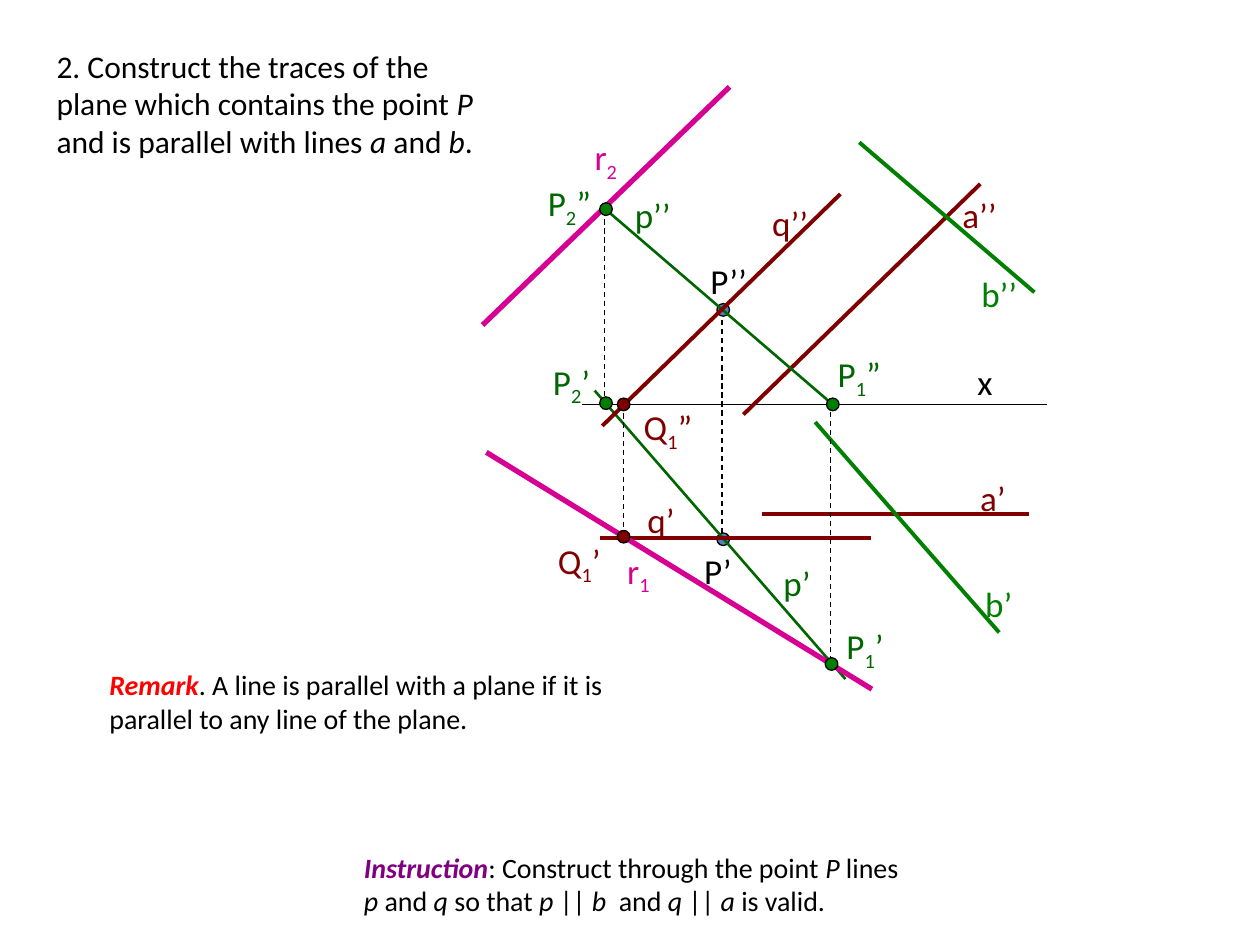
import pptx
import pptx.dml.color
import pptx.enum.dml
import pptx.enum.shapes
import pptx.oxml.ns
import pptx.util
from lxml import etree

Inches = pptx.util.Inches
BLACK, MAROON, GREEN, DARK_GREEN = "000000", "800000", "008000", "006600"
MAGENTA, STEEL, RED, PURPLE = "D60093", "4F81BD", "FF0000", "800080"


def colour(hex_value):
    return pptx.dml.color.RGBColor.from_string(hex_value)


class Drawing:
    font_name = "Calibri"
    label_size = 20
    label_height = 0.44
    dot_size = 0.1
    thin = 0.75

    def __init__(self, slide):
        self.slide = slide
        self.shapes = slide.shapes

    def start_group(self):
        self.shapes = self.slide.shapes.add_group_shape().shapes

    def end_group(self):
        self.shapes = self.slide.shapes

    def line(self, x1, y1, x2, y2, hex_value=BLACK, width=thin, dashed=False):
        ends = [Inches(value) for value in (x1, y1, x2, y2)]
        straight = pptx.enum.shapes.MSO_CONNECTOR.STRAIGHT
        segment = self.shapes.add_connector(straight, *ends)
        segment.line.color.rgb = colour(hex_value)
        segment.line.width = pptx.util.Pt(width)
        if dashed:
            segment.line.dash_style = pptx.enum.dml.MSO_LINE.DASH
        properties = segment._element.spPr
        etree.SubElement(properties, pptx.oxml.ns.qn("a:effectLst"))

    def dot(self, left, top, hex_value):
        box = [Inches(value) for value in (left, top, self.dot_size, self.dot_size)]
        point = self.shapes.add_shape(pptx.enum.shapes.MSO_SHAPE.OVAL, *box)
        point.shadow.inherit = False
        point.fill.solid()
        point.fill.fore_color.rgb = colour(hex_value)
        point.line.color.rgb = colour(BLACK)
        point.line.width = pptx.util.Pt(self.thin)

    def text(self, left, top, width, height, runs, size):
        box = [Inches(value) for value in (left, top, width, height)]
        frame = self.shapes.add_textbox(*box).text_frame
        frame.word_wrap = True
        paragraph = frame.paragraphs[0]
        for words, hex_value, style in runs:
            run = paragraph.add_run()
            run.text = words
            run.font.color.rgb = colour(hex_value)
            formats = {"name": self.font_name, "size": pptx.util.Pt(size)}
            formats.update(style)
            baseline = formats.pop("baseline", None)
            for key, value in formats.items():
                setattr(run.font, key, value)
            if baseline:
                run.font._element.set("baseline", baseline)

    def label(self, left, top, width, name, hex_value, index="", primes=""):
        parts = [(name, {}), (index, {"baseline": "-25000"}), (primes, {})]
        runs = [(words, hex_value, style) for words, style in parts if words]
        self.text(left, top, width, self.label_height, runs, self.label_size)

    def statement(self, left, top, width, height, size, marked, lead="", lead_colour=BLACK):
        runs = [(lead, lead_colour, {"bold": True, "italic": True})] if lead else []
        for position, words in enumerate(marked.split("*")):
            if words:
                runs.append((words, BLACK, {"italic": position % 2 == 1}))
        self.text(left, top, width, height, runs, size)


def draw_given(drawing):
    drawing.start_group()
    drawing.line(4.62, 3.21, 8.31, 3.21)
    drawing.label(7.66, 2.81, 0.47, "x", BLACK)
    drawing.line(7.78, 1.46, 5.9, 3.29, MAROON, 2.25)
    drawing.line(6.82, 1.13, 8.21, 2.32, GREEN, 2.25)
    drawing.line(6.05, 4.08, 8.17, 4.08, MAROON, 2.25)
    drawing.line(5.73, 2.47, 5.73, 4.27, dashed=True)
    drawing.line(6.47, 3.35, 7.93, 5.02, GREEN, 2.25)
    drawing.label(7.72, 4.57, 0.51, "b’", GREEN)
    drawing.label(7.69, 2.11, 0.51, "b’’", GREEN)
    drawing.label(7.54, 1.49, 0.57, "a’’", MAROON)
    drawing.label(7.68, 3.73, 0.53, "a’", MAROON)
    for top in (2.41, 4.23):
        drawing.dot(5.69, top, STEEL)
    drawing.label(5.54, 2.01, 0.61, "P’’", BLACK)
    drawing.label(5.49, 4.31, 0.57, "P’", BLACK)
    drawing.end_group()


def draw_parallels(drawing):
    drawing.start_group()
    drawing.line(4.77, 1.63, 6.62, 3.22, DARK_GREEN, 1.5)
    drawing.line(4.72, 3.1, 6.71, 5.39, DARK_GREEN, 1.5)
    drawing.label(6.12, 4.41, 0.53, "p’", DARK_GREEN)
    drawing.label(4.94, 1.49, 0.55, "p’’", DARK_GREEN)
    drawing.start_group()
    drawing.line(6.67, 1.54, 4.78, 3.38, MAROON, 2.25)
    drawing.line(4.76, 4.27, 6.91, 4.27, MAROON, 2.25)
    drawing.label(6.03, 1.55, 0.51, "q’’", MAROON)
    drawing.label(5.04, 3.91, 0.5, "q’", MAROON)
    drawing.end_group()


def draw_traces(drawing):
    drawing.start_group()
    drawing.line(5.79, 0.69, 3.83, 2.58, MAGENTA, 3)
    drawing.line(3.86, 3.59, 6.92, 5.47, MAGENTA, 3)
    drawing.label(4.62, 1.03, 0.58, "r", MAGENTA, "2")
    drawing.label(4.88, 4.31, 0.66, "r", MAGENTA, "1")
    drawing.end_group()


def draw_trace_points(drawing):
    drawing.start_group()
    drawing.line(6.59, 3.2, 6.59, 5.26, dashed=True)
    drawing.line(4.8, 1.67, 4.8, 3.22, dashed=True)
    for left, top in ((4.76, 3.15), (6.55, 5.22), (6.56, 3.16), (4.76, 1.61)):
        drawing.dot(left, top, GREEN)
    drawing.label(4.25, 1.39, 0.6, "P", DARK_GREEN, "2", "”")
    drawing.label(4.29, 2.81, 0.81, "P", DARK_GREEN, "2", "’")
    drawing.label(6.55, 2.75, 0.58, "P", DARK_GREEN, "1", "”")
    drawing.label(6.62, 4.91, 0.56, "P", DARK_GREEN, "1", "’")
    drawing.start_group()
    drawing.line(4.95, 3.21, 4.95, 4.28, dashed=True)
    for top in (4.21, 3.16):
        drawing.dot(4.9, top, MAROON)
    drawing.label(4.33, 4.23, 0.58, "Q", MAROON, "1", "’")
    drawing.label(5.01, 3.17, 0.61, "Q", MAROON, "1", "”")
    drawing.end_group()


def main():
    deck = pptx.Presentation()
    deck.slide_width, deck.slide_height = Inches(10), Inches(7.5)
    drawing = Drawing(deck.slides.add_slide(deck.slide_layouts[6]))
    drawing.statement(
        0.35, 0.32, 3.72, 1.01, 18,
        "2. Construct the traces of the plane which contains the point *P *"
        "and is parallel with lines* a *and* b*.")
    draw_given(drawing)
    drawing.statement(
        0.77, 5.25, 4.68, 0.64, 16,
        ". A line is parallel with a plane if it is parallel to any line of the plane.",
        "Remark", RED)
    draw_parallels(drawing)
    draw_traces(drawing)
    draw_trace_points(drawing)
    drawing.statement(
        2.79, 6.7, 4.54, 0.64, 16,
        ": Construct through the point *P *lines *p *and *q *so that *p *|| "
        "*b  *and *q *|| *a *is valid.",
        "Instruction", PURPLE)
    deck.save("out.pptx")


if __name__ == "__main__":
    main()
